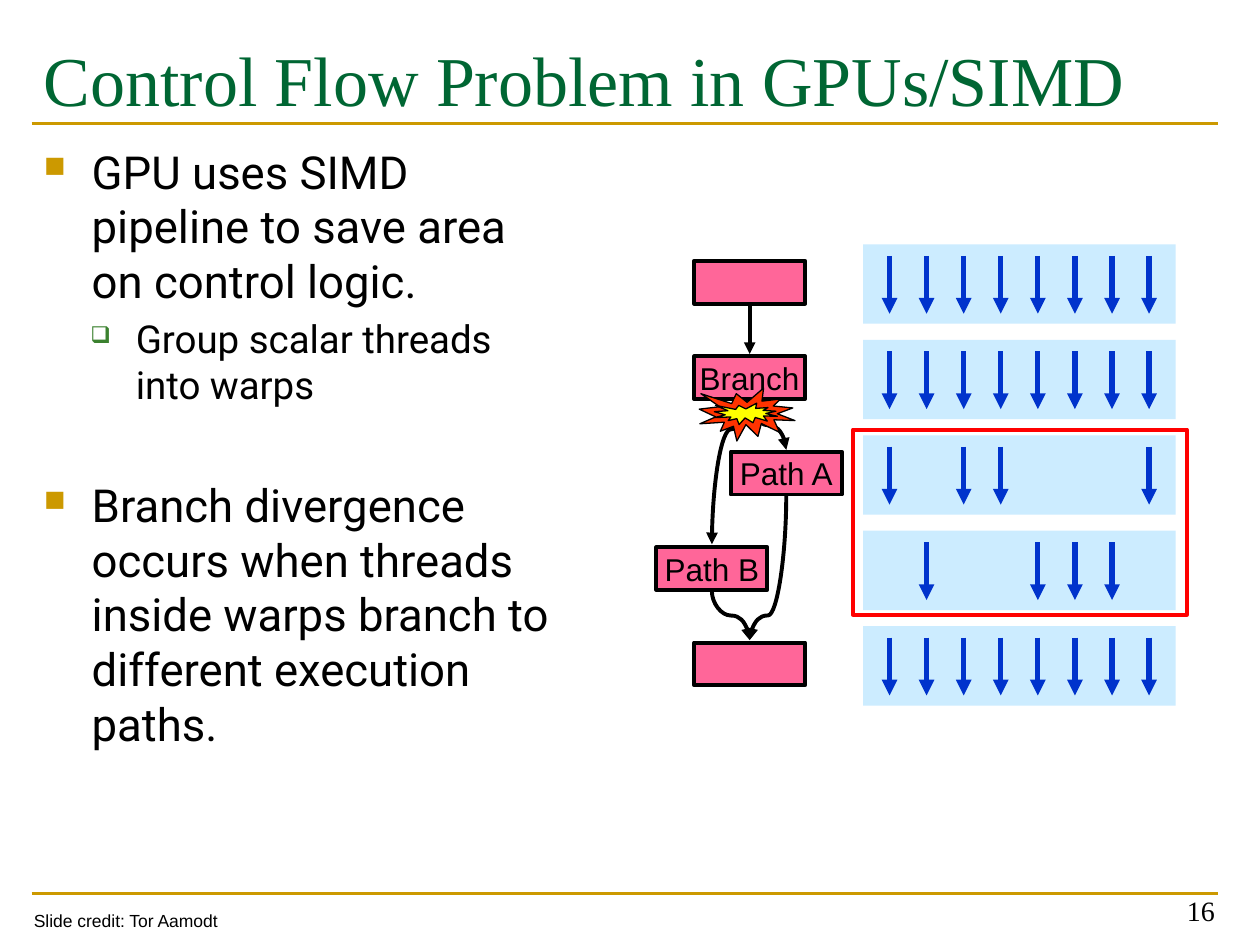
from dataclasses import dataclass
from lxml.etree import SubElement
from pptx import Presentation
from pptx.dml.color import RGBColor
from pptx.enum.shapes import MSO_CONNECTOR, MSO_SHAPE
from pptx.enum.text import MSO_ANCHOR, PP_ALIGN
from pptx.oxml.ns import qn
from pptx.util import Inches, Pt

GOLD, BLACK = "CC9900", "000000"
ROW_GAP = 3.03 / 4
LANE_GAP = 2.06 / 7


@dataclass
class Node:
    x: float
    row: int
    text: str = ""


@dataclass
class Curve:
    x1: float
    y1: float
    x2: float
    y2: float
    bend: float


@dataclass
class Item:
    text: str
    size: int
    left: float
    hang: float
    before: float
    mark: str
    color: str
    scale: int


NODES = [Node(5.51, 0), Node(5.51, 1, "Branch"), Node(5.8, 2, "Path A"),
         Node(5.21, 3, "Path B"), Node(5.51, 4)]
CURVES = [Curve(5.95, 3.18, 5.65, 4.32, 0.2), Curve(5.95, 3.18, 6.24, 3.57, 0.5),
          Curve(6.24, 3.93, 5.95, 5.08, 0.83), Curve(5.65, 4.69, 5.95, 5.08, 0.5)]
ALL = range(8)
LANES = [ALL, ALL, (0, 2, 3, 7), (1, 4, 5, 6), ALL]
ITEMS = [
    Item("GPU uses SIMD pipeline to save area on control logic.",
         26, 0.38, 0.38, 5.2, "■", GOLD, 65),
    Item("Group scalar threads into warps", 22, 0.73, 0.36, 4.4, "❑", "3B812F", 60),
    Item("Branch divergence occurs when threads inside warps branch to "
         "different execution paths.", 26, 0.38, 0.38, 40, "■", GOLD, 65),
]

deck = Presentation()
deck.slide_width, deck.slide_height = Inches(10), Inches(7.5)
slide = deck.slides.add_slide(deck.slide_layouts[6])
shapes = slide.shapes


def paint(form, color: str) -> None:
    """Give a fill or a font a solid colour."""
    if hasattr(form, "solid"):
        form.solid()
        form.fore_color.rgb = RGBColor.from_string(color)
    else:
        form.color.rgb = RGBColor.from_string(color)


def style(par, size: float, face: str, color: str = BLACK) -> None:
    par.font.size, par.font.name = Pt(size), face
    paint(par.font, color)


def add_text(x: float, y: float, w: float, h: float, wrap: bool = True):
    frame = shapes.add_textbox(Inches(x), Inches(y), Inches(w), Inches(h)).text_frame
    frame.word_wrap = wrap
    return frame


def add_line(x1: float, y1: float, x2: float, y2: float, color: str,
             width: float, head: bool = False, kind=MSO_CONNECTOR.STRAIGHT):
    line = shapes.add_connector(kind, Inches(x1), Inches(y1), Inches(x2), Inches(y2))
    paint(line.line.fill, color)
    line.line.width = Pt(width)
    if head:
        SubElement(line.line._get_or_add_ln(), qn("a:tailEnd"), type="triangle")
    SubElement(line._element.spPr, qn("a:effectLst"))
    return line


def add_curve(c: Curve) -> None:
    """Draw a curve that leaves and arrives vertically."""
    w, h = c.y2 - c.y1, abs(c.x2 - c.x1)
    x, y = (c.x1 + c.x2 - w) / 2, (c.y1 + c.y2 - h) / 2
    line = add_line(x, y, x + w, y + h, BLACK, 2.25, True, MSO_CONNECTOR.CURVE)
    right = c.x2 > c.x1
    frame = line._element.spPr.find(qn("a:xfrm"))
    frame.set("rot", str((270 if right else 90) * 60000))
    if right:
        frame.set("flipH", "1")
    guides = line._element.spPr.find(qn("a:prstGeom")).find(qn("a:avLst"))
    SubElement(guides, qn("a:gd"), name="adj1", fmla=f"val {round(c.bend * 100000)}")


def add_form(x: float, y: float, w: float, h: float, fill: str = "",
             edge: str = "", width: float = 2.25, kind=MSO_SHAPE.RECTANGLE):
    form = shapes.add_shape(kind, Inches(x), Inches(y), Inches(w), Inches(h))
    form.shadow.inherit = False
    if fill:
        paint(form.fill, fill)
    else:
        form.fill.background()
    if edge:
        paint(form.line.fill, edge)
        form.line.width = Pt(width)
    else:
        form.line.fill.background()
    return form


def add_node(node: Node) -> None:
    form = add_form(node.x, 2.07 + node.row * ROW_GAP, 0.88, 0.34, "FF6699", BLACK)
    if node.text:
        frame = form.text_frame
        frame.word_wrap, frame.vertical_anchor = False, MSO_ANCHOR.MIDDLE
        par = frame.paragraphs[0]
        par.text, par.alignment = node.text, PP_ALIGN.CENTER
        style(par, 18, "Arial")


def add_item(par, item: Item) -> None:
    par.text, par.space_before = item.text, Pt(item.before)
    style(par, item.size, "Roboto")
    props = par._p.get_or_add_pPr()
    props.set("marL", str(Inches(item.left)))
    props.set("indent", str(-Inches(item.hang)))
    tint = SubElement(props, qn("a:buClr"))
    SubElement(tint, qn("a:srgbClr"), val=item.color)
    SubElement(props, qn("a:buSzPct"), val=str(item.scale * 1000))
    SubElement(props, qn("a:buChar"), char=item.mark)
    # The schema wants default run properties after the bullet
    props.append(props.find(qn("a:defRPr")))


for y in (7.09, 0.98):
    add_line(0.25, y, 9.67, y, GOLD, 1.5)

title = add_text(0.25, 0.17, 9.42, 1.17)
title.margin_top = Inches(0.12)
title.text = "Control Flow Problem in GPUs/SIMD"
style(title.paragraphs[0], 40, "Times New Roman", "006633")

body = add_text(0.25, 1.09, 4.33, 5.68)
for i, item in enumerate(ITEMS):
    add_item(body.add_paragraph() if i else body.paragraphs[0], item)

page = add_text(7.41, 6.91, 2.33, 0.5)
page.text, page.vertical_anchor = "16", MSO_ANCHOR.BOTTOM
page.paragraphs[0].alignment = PP_ALIGN.RIGHT
style(page.paragraphs[0], 16, "Times New Roman")

for row, lanes in enumerate(LANES):
    top = 1.94 + row * ROW_GAP
    add_form(6.85, top, 2.48, 0.63, "CCECFF")
    for lane in lanes:
        x = 7.06 + lane * LANE_GAP
        add_line(x, top + 0.09, x, top + 0.55, "0033CC", 3, True)
add_form(6.77, 3.41, 2.65, 1.47, edge="FF0000")

add_line(5.95, 2.42, 5.95, 2.81, BLACK, 2.25, True)
for curve in CURVES:
    add_curve(curve)
for node in NODES:
    add_node(node)
for box, color in (((5.55, 3.08, 0.76, 0.42), "FF3300"),
                   ((5.67, 3.2, 0.5, 0.17), "FFFF00")):
    add_form(*box, color, BLACK, 0.75, MSO_SHAPE.EXPLOSION1)

credit = add_text(0.17, 7.17, 1.69, 0.27, False)
credit.text = "Slide credit: Tor Aamodt"
style(credit.paragraphs[0], 10, "Arial")

deck.save("out.pptx")
